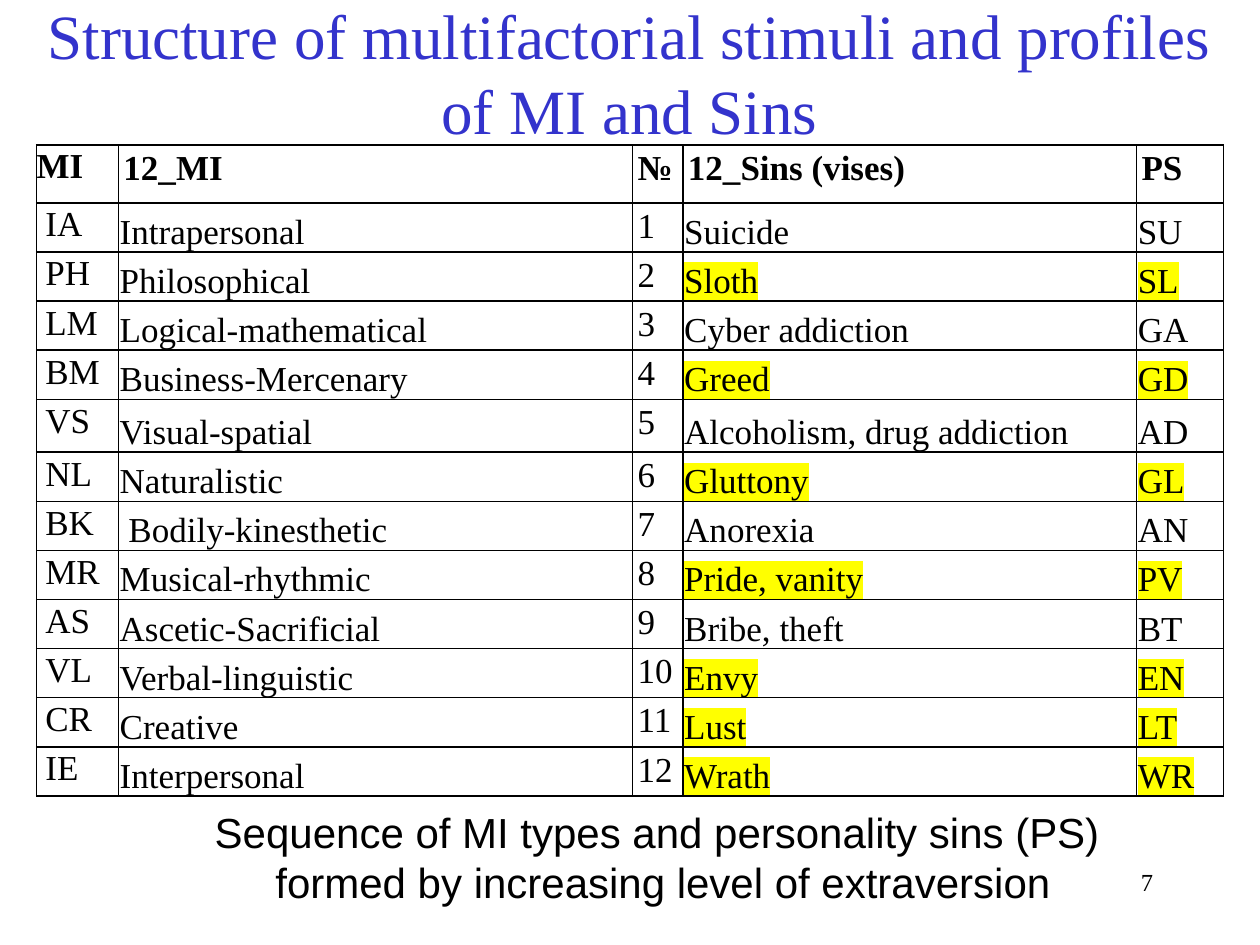
from lxml.etree import SubElement
from pptx import Presentation
from pptx.dml.color import RGBColor
from pptx.enum.text import MSO_ANCHOR as Anchor, PP_ALIGN as Align
from pptx.oxml.ns import qn
from pptx.util import Inches, Pt

SERIF = "Times New Roman"
HEADINGS = ("MI", "12_MI", "№", "12_Sins (vises)", "PS")
PROFILES = [
    ("IA", "Intrapersonal", "Suicide", "SU"),
    ("PH", "Philosophical", "Sloth", "SL"),
    ("LM", "Logical-mathematical", "Cyber addiction", "GA"),
    ("BM", "Business-Mercenary", "Greed", "GD"),
    ("VS", "Visual-spatial", "Alcoholism, drug addiction", "AD"),
    ("NL", "Naturalistic", "Gluttony", "GL"),
    ("BK", " Bodily-kinesthetic", "Anorexia", "AN"),
    ("MR", "Musical-rhythmic", "Pride, vanity", "PV"),
    ("AS", "Ascetic-Sacrificial", "Bribe, theft", "BT"),
    ("VL", "Verbal-linguistic", "Envy", "EN"),
    ("CR", "Creative", "Lust", "LT"),
    ("IE", "Interpersonal", "Wrath", "WR"),
]
DEADLY_SINS = {"SL", "GD", "GL", "PV", "EN", "LT", "WR"}
COLUMN_WIDTHS = (0.65, 4.08, 0.4, 3.6, 0.69)
HEADING_HEIGHT, ROW_HEIGHT, TALL_ROW_HEIGHT = 0.46, 0.39, 0.42
TALL_ROW = 5


def color(hex_string):
    return RGBColor.from_string(hex_string)


def style(paragraph, size, name=SERIF, hue="000000", align=Align.LEFT, bold=False):
    paragraph.alignment = align
    font = paragraph.font
    font.size, font.name, font.bold = Pt(size), name, bold
    font.color.rgb = color(hue)


def add_text(slide, box, lines, size, name=SERIF, hue="000000",
             align=Align.CENTER, anchor=Anchor.TOP, wrap=True):
    frame = slide.shapes.add_textbox(*map(Inches, box)).text_frame
    frame.word_wrap = wrap
    frame.vertical_anchor = anchor
    frame.text = "\n".join(lines)
    for paragraph in frame.paragraphs:
        style(paragraph, size, name, hue, align)


def add_borders(cell):
    properties = cell._tc.get_or_add_tcPr()
    for position, side in enumerate(("a:lnL", "a:lnR", "a:lnT", "a:lnB")):
        line = properties.makeelement(qn(side), {"w": str(Pt(1))})
        properties.insert(position, line)
        fill = SubElement(line, qn("a:solidFill"))
        SubElement(fill, qn("a:srgbClr"), val="000000")


def highlight(run):
    marker = SubElement(run._r.get_or_add_rPr(), qn("a:highlight"))
    SubElement(marker, qn("a:srgbClr"), val="FFFF00")


def fill_cell(cell, text, margin, bottom=False, bold=False, marked=False):
    cell.fill.background()
    cell.margin_left = cell.margin_right = Inches(margin)
    cell.margin_top = Inches(0.01 if margin in (0.01, 0.04) else 0)
    cell.margin_bottom = 0
    cell.vertical_anchor = Anchor.BOTTOM if bottom else Anchor.TOP
    paragraph = cell.text_frame.paragraphs[0]
    run = paragraph.add_run()
    run.text = text
    style(paragraph, 20, align=Align.LEFT if bottom else Align.JUSTIFY, bold=bold)
    if not bottom:
        paragraph.line_spacing = 1.07
    if marked:
        highlight(run)
    add_borders(cell)


def add_profiles(slide, box):
    table = slide.shapes.add_table(
        len(PROFILES) + 1, len(HEADINGS), *map(Inches, box)).table
    table.first_row = table.horz_banding = False
    for column, width in zip(table.columns, COLUMN_WIDTHS):
        column.width = Inches(width)
    for column, heading in enumerate(HEADINGS):
        fill_cell(table.cell(0, column), heading, 0.04 if column else 0, bold=True)
    table.rows[0].height = Inches(HEADING_HEIGHT)
    for number, (code, intelligence, sin, sin_code) in enumerate(PROFILES, 1):
        table.rows[number].height = Inches(
            TALL_ROW_HEIGHT if number == TALL_ROW else ROW_HEIGHT)
        marked = sin_code in DEADLY_SINS
        fill_cell(table.cell(number, 0), code, 0.07)
        fill_cell(table.cell(number, 1), intelligence, 0.01, bottom=True)
        fill_cell(table.cell(number, 2), str(number), 0.04)
        fill_cell(table.cell(number, 3), sin, 0.01, bottom=True, marked=marked)
        fill_cell(table.cell(number, 4), sin_code, 0.01, bottom=True, marked=marked)


def main():
    deck = Presentation()
    deck.slide_width, deck.slide_height = Inches(10), Inches(7.5)
    slide = deck.slides.add_slide(deck.slide_layouts[6])
    add_text(slide, (0.06, 0.04, 9.87, 1.06),
             ["Structure of multifactorial stimuli and profiles of MI and Sins"],
             36, hue="3333CC", anchor=Anchor.MIDDLE)
    add_text(slide, (7.17, 6.83, 2.08, 0.5), ["7"], 14, align=Align.RIGHT)
    add_text(slide, (1.57, 6.35, 7.29, 0.91),
             ["Sequence of MI types and personality sins (PS)",
              " formed by increasing level of extraversion"],
             24, name="Arial", wrap=False)
    add_profiles(slide, (0.29, 1.15, 9.42, 5.13))
    deck.save("out.pptx")


if __name__ == "__main__":
    main()
